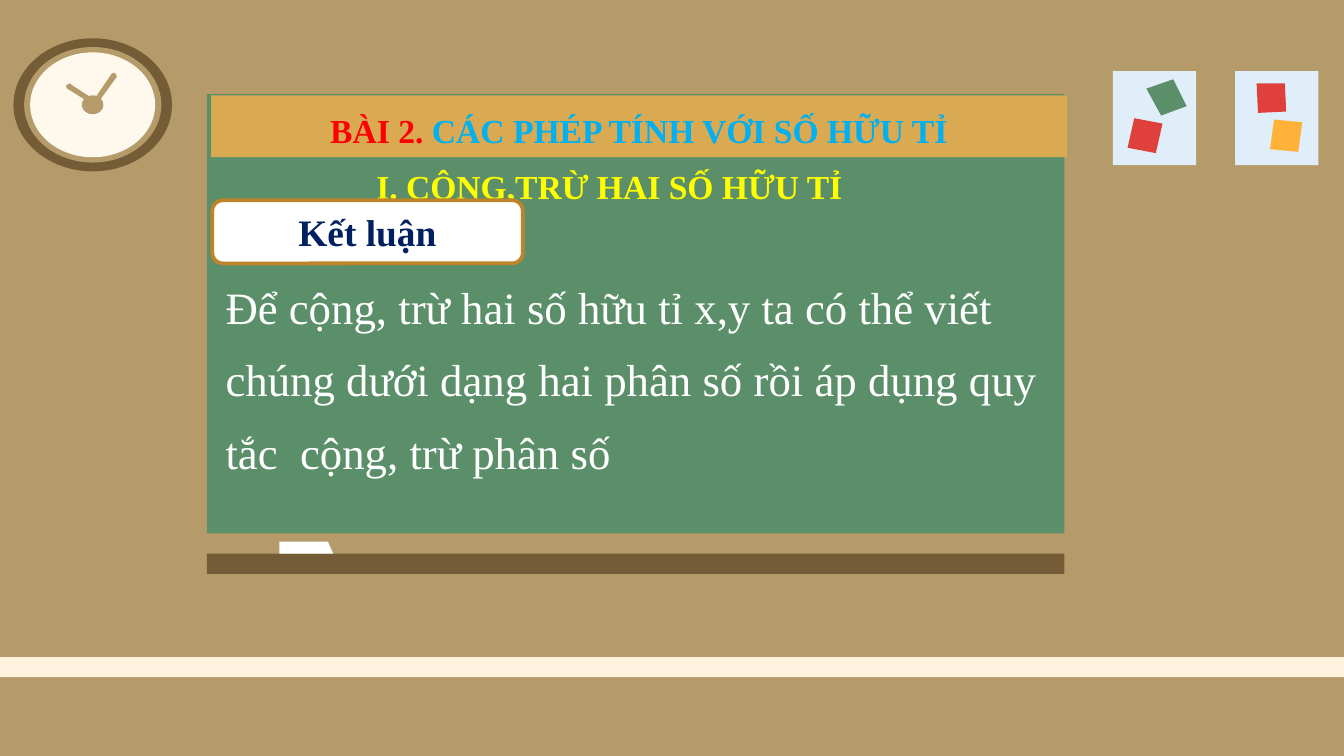
from pptx import Presentation
from pptx.dml.color import RGBColor
from pptx.enum.shapes import MSO_SHAPE as SHAPE
from pptx.enum.text import MSO_ANCHOR as ANCHOR, MSO_AUTO_SIZE as AUTO, PP_ALIGN as ALIGN
from pptx.util import Inches, Pt

TAN, BROWN, GREEN, RED = "B69B6A", "745C36", "5B8F69", "DF403C"


def paint(sp, color):
    """Give a shape a plain fill without line or shadow."""
    sp.shadow.inherit = False
    sp.fill.solid()
    sp.fill.fore_color.rgb = RGBColor.from_string(color)
    sp.line.fill.background()


def write(sp, runs, size, bold=True, align=ALIGN.CENTER, spacing=1.0, gap=0, anchor=ANCHOR.TOP):
    """Write one paragraph from (text, color) runs."""
    tf = sp.text_frame
    tf.word_wrap, tf.auto_size, tf.vertical_anchor = True, AUTO.NONE, anchor
    p = tf.paragraphs[0]
    p.alignment, p.line_spacing = align, spacing
    p.space_before = p.space_after = Pt(gap)
    for text, color in runs:
        r = p.add_run()
        r.text = text
        r.font.name, r.font.size, r.font.bold = "Times New Roman", Pt(size), bold
        r.font.color.rgb = RGBColor.from_string(color)


# Widescreen slide, 16:9
prs = Presentation()
prs.slide_width, prs.slide_height = Inches(10), Inches(10 * 9 / 16)
s = prs.slides.add_slide(prs.slide_layouts[5])
s.background.fill.solid()
s.background.fill.fore_color.rgb = RGBColor.from_string(TAN)

# Floor strip, board, chalk tray and the two wall notes
for x, y, w, h, color in [
    (0, 4.89, 10, 0.15, "FFF2DE"),
    (0, 5.04, 10, 0.58, TAN),
    (1.37, 0.55, 6.72, 3.56, TAN),
    (1.54, 0.7, 6.38, 3.27, GREEN),
    (1.54, 4.12, 6.38, 0.15, BROWN),
    (8.17, 0.44, 0.83, 0.88, TAN),
    (8.28, 0.53, 0.62, 0.7, "E0EEF9"),
    (9.08, 0.44, 0.83, 0.88, TAN),
    (9.19, 0.53, 0.62, 0.7, "E0EEF9"),
]:
    sp = s.shapes.add_shape(SHAPE.RECTANGLE, Inches(x), Inches(y), Inches(w), Inches(h))
    paint(sp, color)

# Clock: concentric ovals, from the rim to the hub
for w, h, color in [(1.18, 0.99, BROWN), (1.02, 0.86, TAN), (0.93, 0.78, "FFF9ED"), (0.16, 0.14, TAN)]:
    sp = s.shapes.add_shape(SHAPE.OVAL, Inches(0.69 - w / 2), Inches(0.78 - h / 2), Inches(w), Inches(h))
    paint(sp, color)

# Clock hands, chalk and the tilted squares on the notes
for color, points in [
    (TAN, [(0.85, 0.54), (0.83, 0.55), (0.7, 0.74), (0.53, 0.63), (0.52, 0.62), (0.5, 0.63),
           (0.49, 0.64), (0.5, 0.66), (0.71, 0.79), (0.87, 0.57), (0.86, 0.55)]),
    ("FFFFFF", [(2.08, 4.03), (2.08, 4.12), (2.48, 4.12), (2.44, 4.03)]),
    (RED, [(8.44, 0.88), (8.39, 1.1), (8.6, 1.14), (8.65, 0.92)]),
    (GREEN, [(8.73, 0.59), (8.53, 0.66), (8.64, 0.86), (8.83, 0.79)]),
    (RED, [(9.56, 0.62), (9.35, 0.62), (9.36, 0.84), (9.57, 0.83)]),
    ("FFB237", [(9.48, 0.89), (9.45, 1.11), (9.66, 1.13), (9.69, 0.91)]),
]:
    corners = [(Inches(x), Inches(y)) for x, y in points]
    builder = s.shapes.build_freeform(*corners[0])
    builder.add_line_segments(corners[1:], close=True)
    paint(builder.convert_to_shape(), color)

# Section heading
sp = s.shapes.add_textbox(Inches(1.57), Inches(1.08), Inches(5.93), Inches(0.46))
write(sp, [("I. CỘNG,TRỪ HAI SỐ HỮU TỈ", "FFFF00")], 18, spacing=1.35, gap=6)

# Rule on the board
sp = s.shapes.add_textbox(Inches(1.58), Inches(1.89), Inches(6.46), Inches(1.74))
rule = ("Để cộng, trừ hai số hữu tỉ x,y ta có thể viết chúng dưới dạng hai phân số "
        "rồi áp dụng quy tắc  cộng, trừ phân số")
write(sp, [(rule, "FFFFFF")], 24, bold=False, align=ALIGN.LEFT, spacing=1.35, gap=6)

# Conclusion label
sp = s.shapes.add_shape(SHAPE.ROUNDED_RECTANGLE, Inches(1.58), Inches(1.49), Inches(2.31), Inches(0.47))
paint(sp, "FFFFFF")
sp.line.color.rgb = RGBColor.from_string("BD8429")
sp.line.width = Pt(2)
write(sp, [("Kết luận", "002060")], 20, anchor=ANCHOR.MIDDLE)

# Lesson title, brought in front of the board
title = s.shapes.title
s.shapes._spTree.append(title._element)
title.left, title.top, title.width, title.height = Inches(1.57), Inches(0.71), Inches(6.37), Inches(0.46)
paint(title, "DAAA53")
write(title, [("BÀI 2. ", "FF0000"), ("CÁC PHÉP TÍNH VỚI SỐ HỮU TỈ", "00B0F0")], 18, spacing=1.2)

prs.save("out.pptx")
